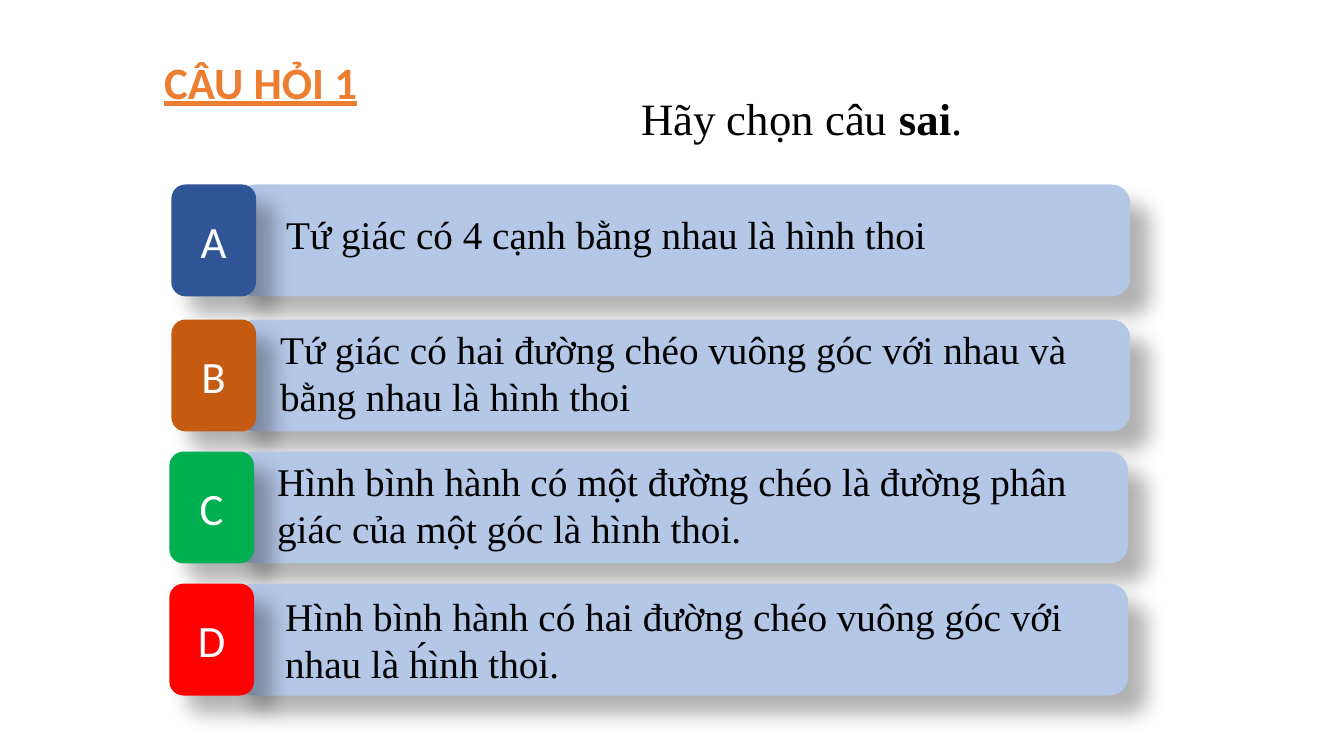
from lxml import etree
from pptx import Presentation
from pptx.dml.color import RGBColor
from pptx.enum.shapes import MSO_SHAPE
from pptx.enum.text import MSO_ANCHOR, MSO_AUTO_SIZE, PP_ALIGN
from pptx.oxml.ns import qn
from pptx.util import Inches, Pt

ROUNDED = MSO_SHAPE.ROUNDED_RECTANGLE
MIDDLE = MSO_ANCHOR.MIDDLE
CENTER = PP_ALIGN.CENTER
GROW = MSO_AUTO_SIZE.SHAPE_TO_FIT_TEXT
SERIF, SANS = "Times New Roman", "Calibri"

ROW_HEIGHT = 1.11
LETTER_WIDTH = 0.84
BAR_OFFSET, BAR_WIDTH = 0.65, 8.86

# letter, colour, left, top, answer, answer box (left, top, width, height)
ANSWERS = [
    ("A", "2F5597", 1.7, 1.83, "Tứ giác có 4 cạnh bằng nhau là hình thoi",
     (2.74, 2.04, 8.19, 0.57)),
    ("B", "C55A11", 1.7, 3.17,
     "Tứ giác có hai đường chéo vuông góc với nhau và bằng nhau là hình thoi",
     (2.68, 3.18, 8.52, 1.04)),
    ("C", "00B050", 1.68, 4.48,
     "Hình bình hành có một đường chéo là đường phân giác của một góc là hình thoi.",
     (2.65, 4.49, 8.29, 1.04)),
    ("D", "FF0000", 1.68, 5.79,
     "Hình bình hành có hai đường chéo vuông góc với nhau là h́ình thoi.",
     (2.73, 5.83, 8.27, 1.04)),
]


def write(shape, pieces, size, font, color):
    """Fill the first paragraph with runs and return it."""
    paragraph = shape.text_frame.paragraphs[0]
    for piece in pieces:
        run = paragraph.add_run()
        run.text = piece
        run.font.size = Pt(size)
        run.font.name = font
        run.font.color.rgb = RGBColor.from_string(color)
    return paragraph


def add_tile(group, left, top, width, color):
    """Add a borderless rounded tile with a soft shadow to the lower right."""
    tile = group.shapes.add_shape(
        ROUNDED, Inches(left), Inches(top), Inches(width), Inches(ROW_HEIGHT))
    tile.fill.solid()
    tile.fill.fore_color.rgb = RGBColor.from_string(color)
    tile.line.fill.background()
    tile.shadow.inherit = False
    effects = tile._element.spPr.find(qn("a:effectLst"))
    shadow = etree.SubElement(
        effects, qn("a:outerShdw"), blurRad=str(Pt(15)), dist=str(Pt(18)),
        dir=str(45 * 60000), algn="tl", rotWithShape="0")
    black = etree.SubElement(shadow, qn("a:srgbClr"), val="000000")
    etree.SubElement(black, qn("a:alpha"), val="30000")
    return tile


prs = Presentation()
prs.slide_width, prs.slide_height = Inches(13.33), Inches(7.5)
slide = prs.slides.add_slide(prs.slide_layouts[6])

question = slide.shapes.add_textbox(Inches(6.26), Inches(0.82), Inches(3.42), Inches(0.64))
question.text_frame.word_wrap = False
question.text_frame.auto_size = GROW
prompt = write(question, ["Hãy chọn câu ", "sai", "."], 32, SERIF, "000000")
prompt.line_spacing = 1.05
prompt.runs[1].font.bold = True

heading = slide.shapes.add_textbox(Inches(1.53), Inches(0.49), Inches(3.36), Inches(0.59))
heading.text_frame.word_wrap = True
heading.text_frame.auto_size = GROW
title = write(heading, ["CÂU HỎI 1"], 32, SANS, "ED7D31")
title.runs[0].font.bold = True
title.runs[0].font.underline = True

for letter, color, left, top, answer, box in ANSWERS:
    row = slide.shapes.add_group_shape()
    add_tile(row, left + BAR_OFFSET, top, BAR_WIDTH, "B4C7E7")
    letter_tile = add_tile(row, left, top, LETTER_WIDTH, color)
    letter_tile.text_frame.vertical_anchor = MIDDLE
    write(letter_tile, [letter], 32, SANS, "FFFFFF").alignment = CENTER

    answer_box = slide.shapes.add_textbox(*[Inches(length) for length in box])
    answer_box.text_frame.word_wrap = True
    answer_box.text_frame.auto_size = GROW
    write(answer_box, [answer], 28, SERIF, "000000")

prs.save("out.pptx")
